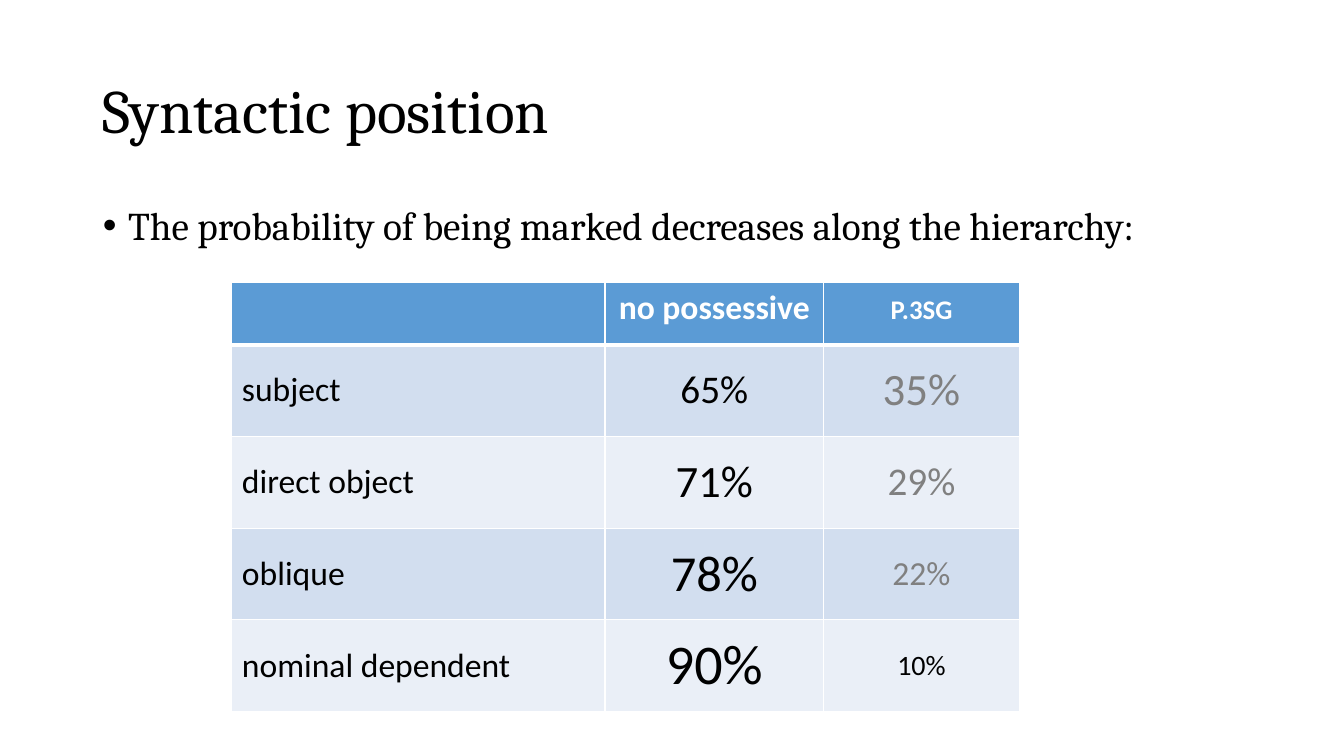
from lxml import etree
from pptx import Presentation
from pptx.dml.color import RGBColor
from pptx.enum import text
from pptx.oxml import ns
from pptx.util import Inches, Pt

BLACK = RGBColor(0x00, 0x00, 0x00)
WHITE = RGBColor(0xFF, 0xFF, 0xFF)
GREY = RGBColor(0x80, 0x80, 0x80)
HEADER_BLUE = RGBColor(0x5B, 0x9B, 0xD5)
BANDS = (RGBColor(0xD2, 0xDE, 0xEF), RGBColor(0xEA, 0xEF, 0xF7))

COLUMN_WIDTHS = (3.7, 2.17, 1.94)
HEADER_HEIGHT, ROW_HEIGHT = 0.62, 0.91
HEADINGS = ("", "no possessive", "p.3sg")
POSITIONS = (
    ("subject", ("65%", 28, BLACK), ("35%", 32, GREY)),
    ("direct object", ("71%", 32, BLACK), ("29%", 28, GREY)),
    ("oblique", ("78%", 36, BLACK), ("22%", 24, GREY)),
    ("nominal dependent", ("90%", 40, BLACK), ("10%", 20, BLACK)),
)


def style(para, name, size, color, bold=False, align=text.PP_ALIGN.LEFT):
    para.alignment = align
    font = para.font
    font.name, font.size, font.bold = name, Pt(size), bold
    font.color.rgb = color


def fill_placeholder(box, words, size, place, anchor):
    box.left, box.top, box.width, box.height = map(Inches, place)
    frame = box.text_frame
    frame.text = words
    frame.auto_size = text.MSO_AUTO_SIZE.NONE
    frame.vertical_anchor = anchor
    para = frame.paragraphs[0]
    para.line_spacing = 0.9
    style(para, "Cambria", size, BLACK)
    return para


def hang_bullet(para, indent):
    para.space_before = Pt(10)
    properties = para._p.get_or_add_pPr()
    properties.set("marL", str(Inches(indent)))
    properties.set("indent", str(-Inches(indent)))


def set_borders(cell, bottom):
    properties = cell._tc.get_or_add_tcPr()
    for side, width in (("L", 1), ("R", 1), ("T", 1), ("B", bottom)):
        line = etree.SubElement(properties, ns.qn(f"a:ln{side}"), w=str(Pt(width)))
        solid = etree.SubElement(line, ns.qn("a:solidFill"))
        etree.SubElement(solid, ns.qn("a:srgbClr"), val=str(WHITE))


def fill_cell(cell, words, fill, size=24, color=BLACK, bold=False,
              align=text.PP_ALIGN.CENTER, anchor=text.MSO_ANCHOR.MIDDLE, bottom=1):
    set_borders(cell, bottom)
    cell.fill.solid()
    cell.fill.fore_color.rgb = fill
    cell.vertical_anchor = anchor
    cell.text = words
    style(cell.text_frame.paragraphs[0], "Calibri", size, color, bold, align)


def add_position_table(page):
    height = HEADER_HEIGHT + ROW_HEIGHT * len(POSITIONS)
    table = page.shapes.add_table(
        len(POSITIONS) + 1, len(HEADINGS), Inches(2.3), Inches(2.8),
        Inches(sum(COLUMN_WIDTHS)), Inches(height)).table
    for column, width in zip(table.columns, COLUMN_WIDTHS):
        column.width = Inches(width)
    for index, row in enumerate(table.rows):
        row.height = Inches(ROW_HEIGHT if index else HEADER_HEIGHT)

    for index, heading in enumerate(HEADINGS):
        fill_cell(table.cell(0, index), heading, HEADER_BLUE, color=WHITE, bold=True,
                  anchor=text.MSO_ANCHOR.TOP, bottom=3)
    small_caps = table.cell(0, 2).text_frame.paragraphs[0].runs[0]
    small_caps.font._element.set("cap", "small")

    for index, (position, *shares) in enumerate(POSITIONS):
        band = BANDS[index % 2]
        fill_cell(table.cell(index + 1, 0), position, band, align=text.PP_ALIGN.LEFT)
        for column, (share, size, color) in enumerate(shares, 1):
            fill_cell(table.cell(index + 1, column), share, band, size, color)


def main():
    deck = Presentation()
    deck.slide_width, deck.slide_height = Inches(13.33), Inches(7.5)
    page = deck.slides.add_slide(deck.slide_layouts[1])
    title, body = page.placeholders
    fill_placeholder(title, "Syntactic position", 44,
                     (0.92, 0.4, 11.5, 1.45), text.MSO_ANCHOR.MIDDLE)
    point = fill_placeholder(
        body, "The probability of being marked decreases along the hierarchy:", 28,
        (0.92, 2, 11.5, 4.76), text.MSO_ANCHOR.TOP)
    hang_bullet(point, 0.25)
    add_position_table(page)
    deck.save("out.pptx")


if __name__ == "__main__":
    main()
